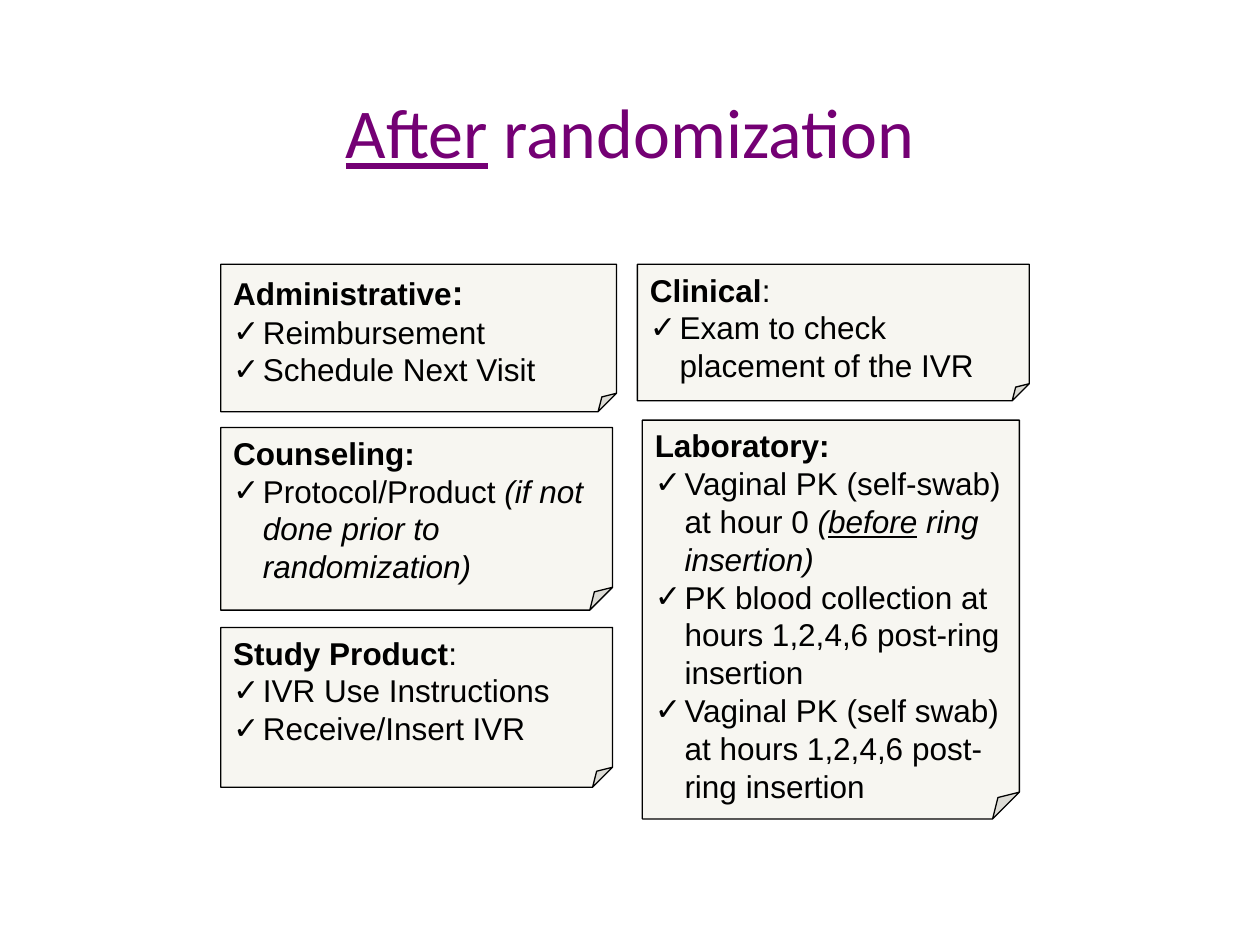
from lxml import etree
from pptx import Presentation
from pptx.dml.color import RGBColor
from pptx.enum.shapes import MSO_SHAPE
from pptx.enum.text import MSO_ANCHOR, PP_ALIGN
from pptx.oxml.ns import qn
from pptx.util import Cm, Pt

NOTE = MSO_SHAPE.FOLDED_CORNER
TOP, MIDDLE = MSO_ANCHOR.TOP, MSO_ANCHOR.MIDDLE
LEFT, CENTER = PP_ALIGN.LEFT, PP_ALIGN.CENTER

COLORS = {"title": "740074", "note": "EEECE1", "ink": "000000"}
ALPHA = 46
INDENT = Cm(0.6)

# A run is (text, styles): b bold, i italic, u underline
TITLE = [("After", "u"), (" randomization", "")]

# Each note: place in cm (left, top, width, height), fold in %, heading, items
NOTES = [
    ((4.45, 5.33, 7.98, 2.97), 12.5,
     [("Administrative", "b"), (":", "b", 20)],
     [[("Reimbursement", "")], [("Schedule Next Visit", "")]]),
    ((4.45, 8.62, 7.9, 3.68), 12.5,
     [("Counseling:", "b")],
     [[("Protocol/Product ", ""),
       ("(if not done prior to randomization)", "i")]]),
    ((12.85, 5.33, 7.9, 2.75), 12.5,
     [("Clinical", "b"), (":", "")],
     [[("Exam to check placement of the IVR", "")]]),
    ((12.95, 8.47, 7.6, 8.04), 7.1,
     [("Laboratory:", "b")],
     [[("Vaginal PK (self-swab) at hour 0 ", ""), ("(", "i"),
       ("before", "iu"), (" ring insertion)", "i")],
      [("PK blood collection at hours 1,2,4,6 post-ring insertion", "")],
      [("Vaginal PK (self swab) at hours 1,2,4,6 post-ring insertion", "")]]),
    ((4.45, 12.65, 7.9, 3.22), 12.5,
     [("Study Product", "b"), (":", "")],
     [[("IVR Use Instructions", "")], [("Receive/Insert IVR", "")]]),
]


def rgb(name):
    return RGBColor.from_string(COLORS[name])


def add_runs(para, runs, face, color, base):
    for text, style, *size in runs:
        run = para.add_run()
        run.text = text
        font = run.font
        font.name = face
        font.size = Pt(size[0] if size else base)
        font.color.rgb = rgb(color)
        font.bold = "b" in style
        font.italic = "i" in style
        font.underline = "u" in style


def add_check(para):
    """Give the paragraph a hanging check mark."""
    props = para._p.get_or_add_pPr()
    props.set("marL", str(INDENT))
    props.set("indent", str(-INDENT))
    etree.SubElement(props, qn("a:buFont"), typeface="Arial")
    etree.SubElement(props, qn("a:buChar"), char="✓")


def set_fold(note, fold):
    """Size the folded corner, which has no entry in note.adjustments."""
    guides = note._element.spPr.find(".//" + qn("a:avLst"))
    etree.SubElement(guides, qn("a:gd"), name="adj",
                     fmla=f"val {round(fold * 1000)}")


def add_note(slide, place, fold, head, items):
    note = slide.shapes.add_shape(NOTE, *map(Cm, place))
    set_fold(note, fold)
    note.shadow.inherit = False
    note.fill.solid()
    note.fill.fore_color.rgb = rgb("note")
    tint = note._element.spPr.find(".//" + qn("a:srgbClr"))
    etree.SubElement(tint, qn("a:alpha"), val=str(ALPHA * 1000))
    note.line.color.rgb = rgb("ink")
    note.line.width = Pt(0.75)
    frame = note.text_frame
    frame.word_wrap = True
    frame.vertical_anchor = TOP
    para = frame.paragraphs[0]
    para.alignment = LEFT
    add_runs(para, head, "Arial", "ink", 18)
    for item in items:
        para = frame.add_paragraph()
        para.alignment = LEFT
        add_check(para)
        add_runs(para, item, "Arial", "ink", 18)


def main():
    deck = Presentation()
    deck.slide_width, deck.slide_height = Cm(25.4), Cm(19.05)
    slide = deck.slides.add_slide(deck.slide_layouts[5])
    title = slide.shapes.title
    title.left, title.top = Cm(1.27), Cm(1.47)
    title.width, title.height = Cm(22.86), Cm(2.34)
    title.text_frame.vertical_anchor = MIDDLE
    para = title.text_frame.paragraphs[0]
    para.alignment = CENTER
    add_runs(para, TITLE, "Calibri", "title", 40)
    for note in NOTES:
        add_note(slide, *note)
    deck.save("out.pptx")


if __name__ == "__main__":
    main()
